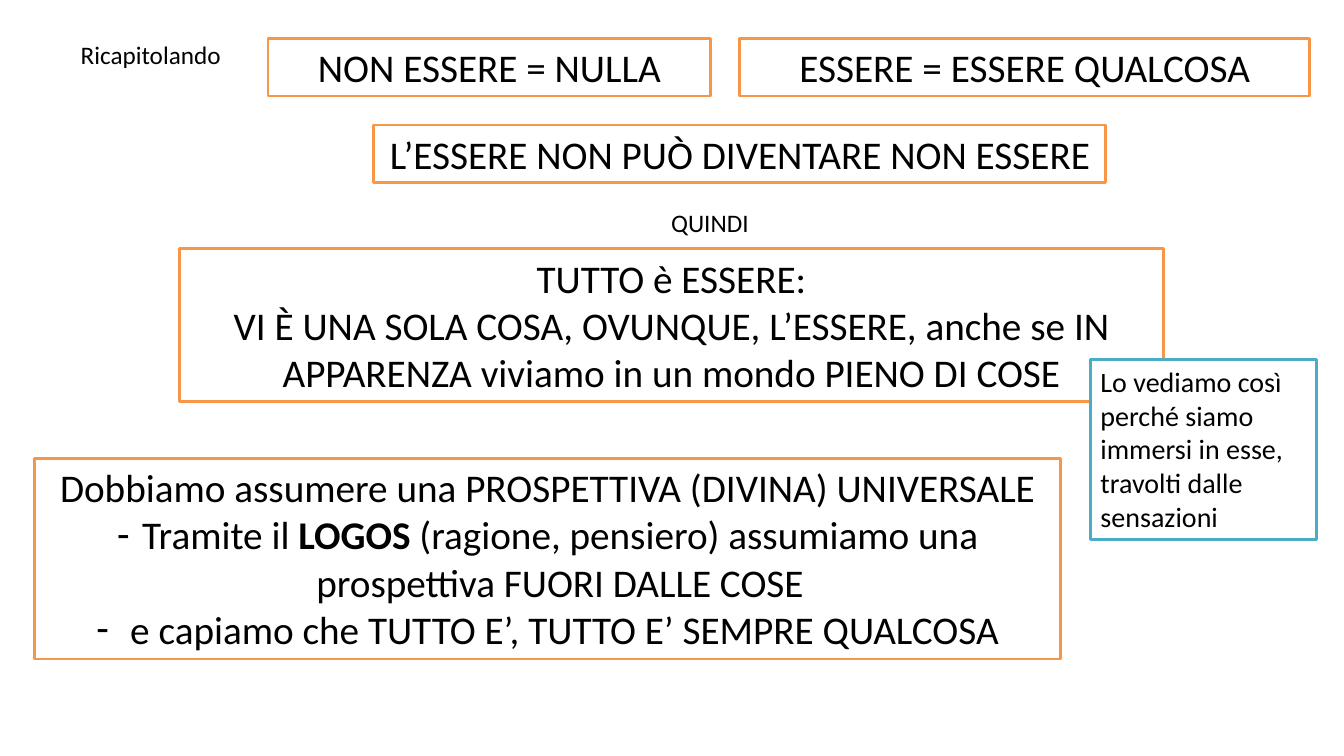
"""Build a one-slide recap of being and non-being as outlined text panels."""
from dataclasses import dataclass

from lxml.etree import SubElement
from pptx import Presentation
from pptx.dml.color import RGBColor
from pptx.enum.shapes import MSO_SHAPE
from pptx.enum.text import MSO_ANCHOR, MSO_AUTO_SIZE, PP_ALIGN
from pptx.oxml.ns import qn
from pptx.util import Pt

COLORS = {"white": "FFFFFF", "black": "000000", "orange": "F79646", "blue": "4BACC6"}
FONT = "Calibri"
KEYWORD = "LOGOS"
DASH_INDENT = Pt(18)


@dataclass(frozen=True)
class Panel:
    left: float
    top: float
    width: float
    height: float
    paragraphs: tuple[str, ...]
    outline: str = "orange"
    size: int = 28
    alignment: PP_ALIGN = PP_ALIGN.CENTER
    dashed_from: int = 99


HEADING = Panel(50.4, 24.5, 128.2, 29.1, ("Ricapitolando",), "white", 18, PP_ALIGN.LEFT)
CONCLUSION = Panel(24.5, 327.6, 733, 143.2, (
    "Dobbiamo assumere una PROSPETTIVA (DIVINA) UNIVERSALE",
    "Tramite il LOGOS (ragione, pensiero) assumiamo una prospettiva FUORI DALLE COSE",
    " e capiamo che TUTTO E’, TUTTO E’ SEMPRE QUALCOSA",
), dashed_from=1)
PANELS = (
    Panel(191.5, 27.4, 316, 41.2, ("NON ESSERE = NULLA",)),
    Panel(267.1, 89.3, 522.7, 41.2, ("L’ESSERE NON PUÒ DIVENTARE NON ESSERE",)),
    Panel(128.2, 177.8, 702.7, 108.8, (
        "TUTTO è ESSERE:",
        "VI È UNA SOLA COSA, OVUNQUE, L’ESSERE, anche se IN APPARENZA "
        "viviamo in un mondo PIENO DI COSE",
    )),
    Panel(528.5, 27.4, 406.8, 41.2, ("ESSERE = ESSERE QUALCOSA",)),
    Panel(779, 257, 161.3, 128.2, (
        "Lo vediamo così perché siamo immersi in esse, travolti dalle sensazioni",
    ), "blue", 20, PP_ALIGN.LEFT),
    Panel(472.3, 144.7, 91.4, 29.1, ("QUINDI",), "white", 18, PP_ALIGN.LEFT),
)


def color(name: str) -> RGBColor:
    """Return the named palette colour."""
    return RGBColor.from_string(COLORS[name])


def set_bullet(paragraph, dashed: bool) -> None:
    """Give a paragraph a dash bullet, or remove its bullet and indent."""
    properties = paragraph._p.get_or_add_pPr()
    indent = DASH_INDENT if dashed else 0
    properties.set("marL", str(indent))
    properties.set("indent", str(-indent))
    if dashed:
        SubElement(properties, qn("a:buFontTx"))
        SubElement(properties, qn("a:buChar"), char="-")
    else:
        SubElement(properties, qn("a:buNone"))


def fill_paragraph(paragraph, text: str, panel: Panel, dashed: bool) -> None:
    """Write a paragraph with its keyword in bold."""
    paragraph.alignment = panel.alignment
    paragraph.space_before = Pt(0)
    set_bullet(paragraph, dashed)
    for part in filter(None, text.partition(KEYWORD)):
        run = paragraph.add_run()
        run.text = part
        run.font.name = FONT
        run.font.size = Pt(panel.size)
        run.font.bold = part == KEYWORD
        run.font.color.rgb = color("black")


def format_panel(shape, panel: Panel) -> None:
    """Place, outline and fill a shape with the panel's text."""
    shape.left, shape.top = Pt(panel.left), Pt(panel.top)
    shape.width, shape.height = Pt(panel.width), Pt(panel.height)
    shape.fill.solid()
    shape.fill.fore_color.rgb = color("white")
    shape.line.color.rgb = color(panel.outline)
    shape.line.width = Pt(2)
    frame = shape.text_frame
    frame.word_wrap = True
    frame.auto_size = MSO_AUTO_SIZE.NONE
    frame.vertical_anchor = MSO_ANCHOR.TOP
    for index, text in enumerate(panel.paragraphs):
        paragraph = frame.add_paragraph() if index else frame.paragraphs[0]
        fill_paragraph(paragraph, text, panel, index >= panel.dashed_from)


def main() -> None:
    """Create and save the presentation."""
    presentation = Presentation()
    presentation.slide_width, presentation.slide_height = Pt(960), Pt(540)
    slide = presentation.slides.add_slide(presentation.slide_layouts[1])
    format_panel(slide.shapes.title, HEADING)
    format_panel(slide.placeholders[1], CONCLUSION)
    for panel in PANELS:
        shape = slide.shapes.add_shape(MSO_SHAPE.RECTANGLE, 0, 0, Pt(1), Pt(1))
        shape.shadow.inherit = False
        format_panel(shape, panel)
    presentation.save("out.pptx")


if __name__ == "__main__":
    main()
